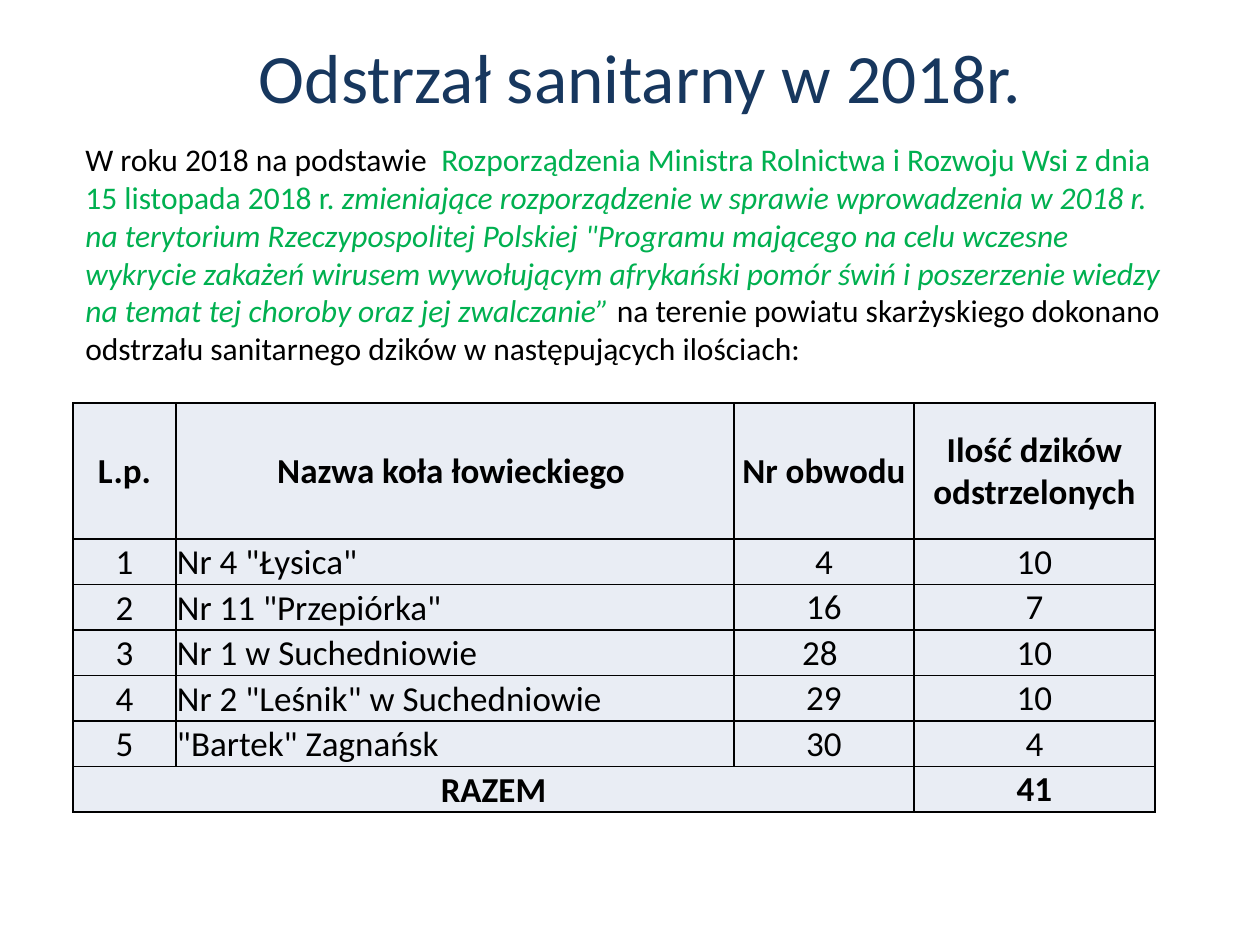
from lxml import etree
from pptx import Presentation
from pptx.dml.color import RGBColor
from pptx.enum.text import MSO_ANCHOR, PP_ALIGN
from pptx.oxml.ns import qn
from pptx.util import Pt

PX = 914400 // 126
LEFT, MID = PP_ALIGN.LEFT, PP_ALIGN.CENTER
CENTER, BOTTOM = MSO_ANCHOR.MIDDLE, MSO_ANCHOR.BOTTOM
THEME = {
    "font": "Calibri", "navy": "17375E", "green": "00B050",
    "black": "000000", "fill": "E9EDF4",
    "title": 39.6, "body": 18, "cell": 20, "edge": 1,
}


def style(run, size, color, bold=False, italic=False):
    font = run.font
    font.name = THEME["font"]
    font.size = Pt(THEME[size])
    font.color.rgb = RGBColor.from_string(THEME[color])
    font.bold, font.italic = bold, italic


def edge(cell):
    props = cell._tc.get_or_add_tcPr()
    for at, side in enumerate(("a:lnL", "a:lnR", "a:lnT", "a:lnB")):
        line = etree.Element(qn(side), w=str(Pt(THEME["edge"])))
        fill = etree.SubElement(line, qn("a:solidFill"))
        etree.SubElement(fill, qn("a:srgbClr"), val=THEME["black"])
        props.insert(at, line)


deck = Presentation()
deck.slide_width, deck.slide_height = 1260 * PX, 945 * PX
slide = deck.slides.add_slide(deck.slide_layouts[6])

title = slide.shapes.add_textbox(84 * PX, 37 * PX, 1113 * PX, 78 * PX)
frame = title.text_frame
frame.word_wrap = True
frame.vertical_anchor = CENTER
frame.text = "Odstrzał sanitarny w 2018r."
frame.paragraphs[0].alignment = MID
style(frame.paragraphs[0].runs[0], "title", "navy")

rows = [
    ("L.p.", "Nazwa koła łowieckiego ", "Nr obwodu", "Ilość dzików odstrzelonych"),
    ("1", 'Nr 4 "Łysica"', "4", "10"),
    ("2", 'Nr 11 "Przepiórka"', "16", "7"),
    ("3", "Nr 1 w Suchedniowie", "28 ", "10"),
    ("4", 'Nr 2 "Leśnik" w Suchedniowie', "29", "10"),
    ("5", '"Bartek" Zagnańsk', "30", "4"),
    ("RAZEM", "", "", "41"),
]
last = len(rows) - 1
wide = (103, 558, 180, 241)
high, head = 409, 136
table = slide.shapes.add_table(
    len(rows), len(wide), 73 * PX, 403 * PX, sum(wide) * PX, high * PX).table
table.first_row = table.horz_banding = False
for col, width in zip(table.columns, wide):
    col.width = width * PX
for r, words in enumerate(rows):
    table.rows[r].height = (high - head) * PX // last if r else head * PX
    for c, word in enumerate(words):
        cell = table.cell(r, c)
        cell.margin_left = cell.margin_right = cell.margin_top = PX
        cell.margin_bottom = 0
        cell.vertical_anchor = BOTTOM if r and c < 2 else CENTER
        cell.fill.solid()
        cell.fill.fore_color.rgb = RGBColor.from_string(THEME["fill"])
        edge(cell)
        if word:
            cell.text_frame.text = word
            para = cell.text_frame.paragraphs[0]
            para.alignment = LEFT if r and c == 1 else MID
            style(para.runs[0], "cell", "black", bold=r in (0, last))
table.cell(last, 0).merge(table.cell(last, 2))

parts = [
    ("W roku 2018 na podstawie  ", "black", False),
    ("Rozporządzenia Ministra Rolnictwa i Rozwoju Wsi z dnia "
     "15 listopada 2018 r. ", "green", False),
    ("zmieniające rozporządzenie w sprawie wprowadzenia w 2018 r. na terytorium "
     'Rzeczypospolitej Polskiej "Programu mającego na celu wczesne wykrycie '
     "zakażeń wirusem wywołującym afrykański pomór świń i poszerzenie wiedzy "
     "na temat tej choroby oraz jej zwalczanie” ", "green", True),
    ("na terenie powiatu skarżyskiego dokonano odstrzału sanitarnego dzików "
     "w następujących ilościach:", "black", False),
]
body = slide.shapes.add_textbox(73 * PX, 134 * PX, 1124 * PX, 280 * PX)
body.text_frame.word_wrap = True
para = body.text_frame.paragraphs[0]
for words, color, slant in parts:
    run = para.add_run()
    run.text = words
    style(run, "body", color, italic=slant)

deck.save("out.pptx")
